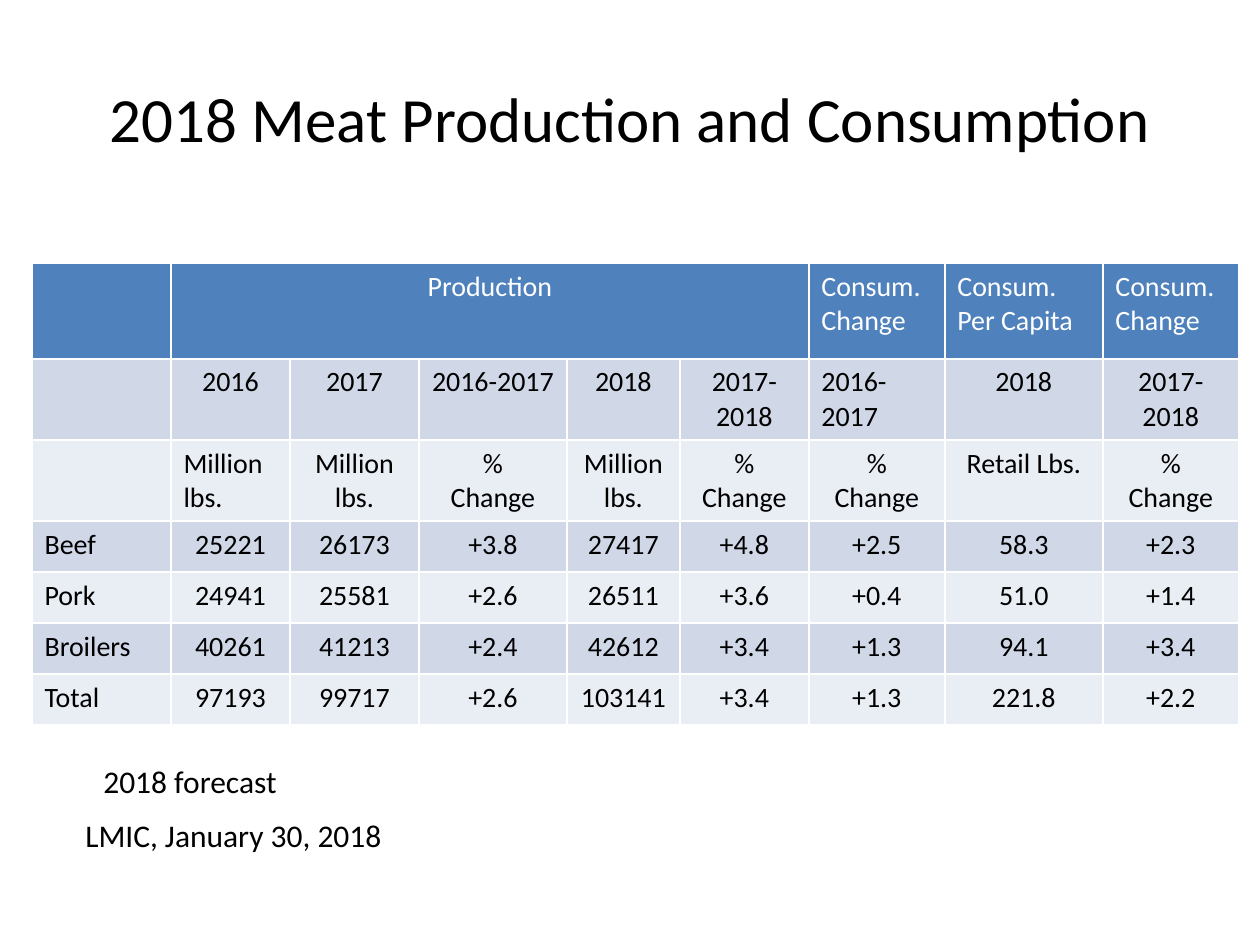
from dataclasses import dataclass

from lxml import etree
from pptx import Presentation, util as u
from pptx.dml.color import RGBColor
from pptx.enum import text
from pptx.oxml import ns

PX = u.Inches(1) / 126
LEFT, CENTER = text.PP_ALIGN.LEFT, text.PP_ALIGN.CENTER


def px(n):
    return u.Emu(round(n * PX))


@dataclass(frozen=True)
class Theme:
    font: str = "Calibri"
    ink: str = "000000"
    white: str = "FFFFFF"
    header: str = "4F81BD"
    bands: tuple = ("D0D8E8", "E9EDF4")
    title_pt: int = 36
    note_pt: int = 18
    cell_pt: int = 16
    border_pt: int = 1


class Deck:
    def __init__(self, prs, theme):
        self.theme = theme
        self.s = prs.slides.add_slide(prs.slide_layouts[5])

    def add_lines(self, tf, words, size, color, align=LEFT):
        """Add one paragraph for each line of words."""
        for i, line in enumerate(words.split("\n")):
            p = tf.paragraphs[0] if i == 0 else tf.add_paragraph()
            p.alignment = align
            r = p.add_run()
            r.text = line
            r.font.name = self.theme.font
            r.font.size = u.Pt(size)
            r.font.bold = False
            r.font.color.rgb = RGBColor.from_string(color)

    def title(self, words, x, y, w, h):
        sp = self.s.shapes.title
        sp.left, sp.top, sp.width, sp.height = map(px, (x, y, w, h))
        sp.text_frame.vertical_anchor = text.MSO_ANCHOR.MIDDLE
        self.add_lines(sp.text_frame, words, self.theme.title_pt, self.theme.ink, CENTER)

    def note(self, words, x, y, w, h):
        tf = self.s.shapes.add_textbox(*map(px, (x, y, w, h))).text_frame
        tf.word_wrap = True
        tf.auto_size = text.MSO_AUTO_SIZE.SHAPE_TO_FIT_TEXT
        self.add_lines(tf, words, self.theme.note_pt, self.theme.ink)

    def borders(self, cell):
        tc_pr = cell._tc.get_or_add_tcPr()
        for side in "LRTB":
            ln = etree.SubElement(tc_pr, ns.qn(f"a:ln{side}"),
                                  w=str(u.Pt(self.theme.border_pt)))
            fill = etree.SubElement(ln, ns.qn("a:solidFill"))
            etree.SubElement(fill, ns.qn("a:srgbClr"), val=self.theme.white)

    def table(self, rows, x, y, widths, heights, merges, left_cells):
        t = self.theme
        tbl = self.s.shapes.add_table(
            len(rows), len(widths),
            *map(px, (x, y, sum(widths), sum(heights)))).table
        tbl.first_row = tbl.horz_banding = False
        for col, w in zip(tbl.columns, widths):
            col.width = px(w)
        for row, h in zip(tbl.rows, heights):
            row.height = px(h)
        for first, last in merges:
            tbl.cell(*first).merge(tbl.cell(*last))
        for i, row in enumerate(rows):
            back = t.bands[(i - 1) % 2] if i else t.header
            for j, words in enumerate(row):
                cell = tbl.cell(i, j)
                self.borders(cell)
                cell.fill.solid()
                cell.fill.fore_color.rgb = RGBColor.from_string(back)
                if words:
                    align = LEFT if j == 0 or (i, j) in left_cells else CENTER
                    self.add_lines(cell.text_frame, words, t.cell_pt,
                                   t.ink if i else t.white, align)


ROWS = [
    ["", "Production", "", "", "", "", "Consum. Change", "Consum.\nPer Capita",
     "Consum.\nChange"],
    ["", "2016", "2017", "2016-2017", "2018", "2017-\n2018", "2016-2017", "2018",
     "2017-2018"],
    ["", "Million lbs.", "Million lbs.", "%\nChange", "Million\nlbs.", "%\nChange",
     "%\nChange", "Retail Lbs.", "%\nChange"],
    ["Beef", "25221", "26173", "+3.8", "27417", "+4.8", "+2.5", "58.3", "+2.3"],
    ["Pork", "24941", "25581", "+2.6", "26511", "+3.6", "+0.4", "51.0", "+1.4"],
    ["Broilers", "40261", "41213", "+2.4", "42612", "+3.4", "+1.3", "94.1", "+3.4"],
    ["Total", "97193", "99717", "+2.6", "103141", "+3.4", "+1.3", "221.8", "+2.2"],
]


def main():
    prs = Presentation()
    prs.slide_width, prs.slide_height = px(1260), px(945)
    deck = Deck(prs, Theme())

    # Title
    deck.title("2018 Meat Production and Consumption", 63, 38, 1134, 158)

    # Production and consumption table
    deck.table(ROWS, 32, 263,
               widths=[139, 119, 129, 148, 113, 129, 136, 158, 136],
               heights=[96, 81, 81] + [51] * 4,
               merges=[((0, 1), (0, 5))],
               left_cells={(0, 6), (0, 7), (0, 8), (1, 6), (2, 1)})

    # Source notes
    deck.note("LMIC, January 30, 2018", 73, 810, 388, 50)
    deck.note("2018 forecast", 91, 756, 444, 50)

    prs.save("out.pptx")


if __name__ == "__main__":
    main()
